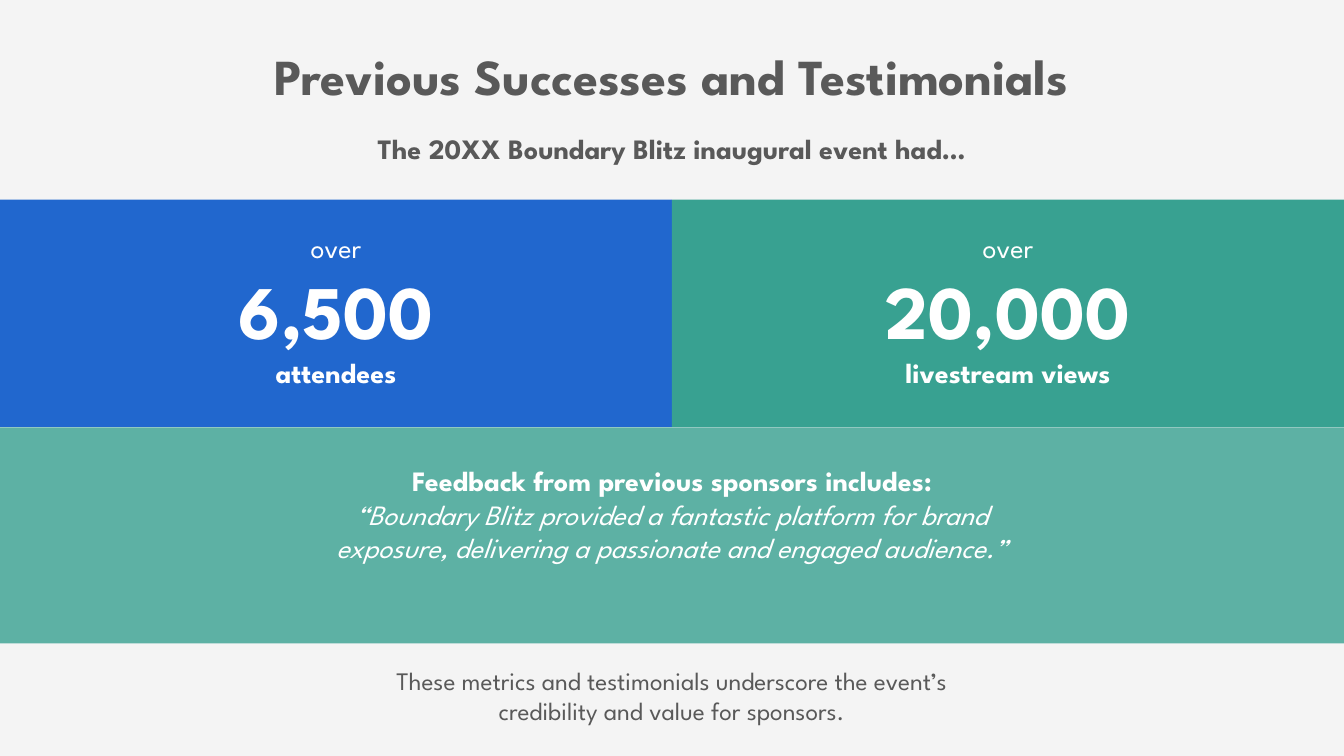
from lxml.etree import SubElement
from pptx import Presentation
from pptx.dml.color import RGBColor
from pptx.enum.shapes import MSO_SHAPE
from pptx.enum.text import MSO_AUTO_SIZE, PP_ALIGN
from pptx.oxml.ns import qn
from pptx.util import Cm, Pt

COLORS = {
    "background": "F4F4F4",
    "text": "595959",
    "white": "FFFFFF",
    "blue": "2167CE",
    "green": "38A191",
}
FORMATS = {
    "title": {"size": Pt(36), "bold": True},
    "heading": {"size": Pt(20), "bold": True},
    "body": {"size": Pt(20), "bold": False},
    "quote": {"size": Pt(20), "italic": True},
    "number": {"size": Pt(54), "bold": True},
    "closing": {"size": Pt(18), "bold": False},
}
SLIDE_WIDTH = 33.87
PANEL_WIDTH = SLIDE_WIDTH / 2


def add_block(left, top, width, height, color):
    block = slide.shapes.add_shape(
        MSO_SHAPE.ROUNDED_RECTANGLE, Cm(left), Cm(top), Cm(width), Cm(height))
    block.adjustments[0] = 0
    block.shadow.inherit = False
    block.fill.solid()
    block.fill.fore_color.rgb = RGBColor.from_string(COLORS[color])
    block.line.fill.background()
    return block


def add_text(left, top, width, height, color, paragraphs):
    """Add centred text; each paragraph is a list of (text, format) lines."""
    box = slide.shapes.add_textbox(Cm(left), Cm(top), Cm(width), Cm(height))
    frame = box.text_frame
    frame.word_wrap = True
    frame.auto_size = MSO_AUTO_SIZE.SHAPE_TO_FIT_TEXT
    for index, lines in enumerate(paragraphs):
        paragraph = frame.add_paragraph() if index else frame.paragraphs[0]
        paragraph.alignment = PP_ALIGN.CENTER
        for line_index, (text, format_name) in enumerate(lines):
            if line_index:
                paragraph.add_line_break()
            run = paragraph.add_run()
            run.text = text
            run.font.name = "League Spartan"
            run.font.color.rgb = RGBColor.from_string(COLORS[color])
            for attribute, value in FORMATS[format_name].items():
                setattr(run.font, attribute, value)


presentation = Presentation()
presentation.slide_width = Cm(SLIDE_WIDTH)
presentation.slide_height = Cm(19.05)
slide = presentation.slides.add_slide(presentation.slide_layouts[6])
slide.background.fill.solid()
slide.background.fill.fore_color.rgb = RGBColor.from_string(COLORS["background"])

# Title and introduction
add_text(4.34, 1.02, 25.17, 1.8, "text",
         [[("Previous Successes and Testimonials", "title")]])
add_text(7.57, 3.2, 18.72, 1.12, "text",
         [[("The 20XX Boundary Blitz inaugural event had…", "heading")]])

# Sponsor feedback on a translucent band
feedback_band = add_block(0, 10.77, SLIDE_WIDTH, 5.44, "green")
band_color = feedback_band.fill._xPr.find(qn("a:solidFill"))[0]
SubElement(band_color, qn("a:alpha"), val="80000")
add_text(7.82, 11.56, 18.24, 3.68, "white", [
    [("Feedback from previous sponsors includes:", "heading")],
    [("“Boundary Blitz provided a fantastic platform for brand exposure, "
      "delivering a passionate and engaged audience.”", "quote")],
])

# Audience figures, side by side
panels = [("blue", "6,500", "attendees"), ("green", "20,000", "livestream views")]
for column, (color, number, label) in enumerate(panels):
    left = column * PANEL_WIDTH
    add_block(left, 5.03, PANEL_WIDTH, 5.73, color)
    add_text(left, 5.69, PANEL_WIDTH, 4.27, "white", [
        [("over", "body")],
        [(number, "number"), (label, "heading")],
    ])

# Closing remark
add_text(8.46, 16.64, 16.94, 1.8, "text", [
    [("These metrics and testimonials underscore the event’s "
      "credibility and value for sponsors.", "closing")],
])

presentation.save("out.pptx")
